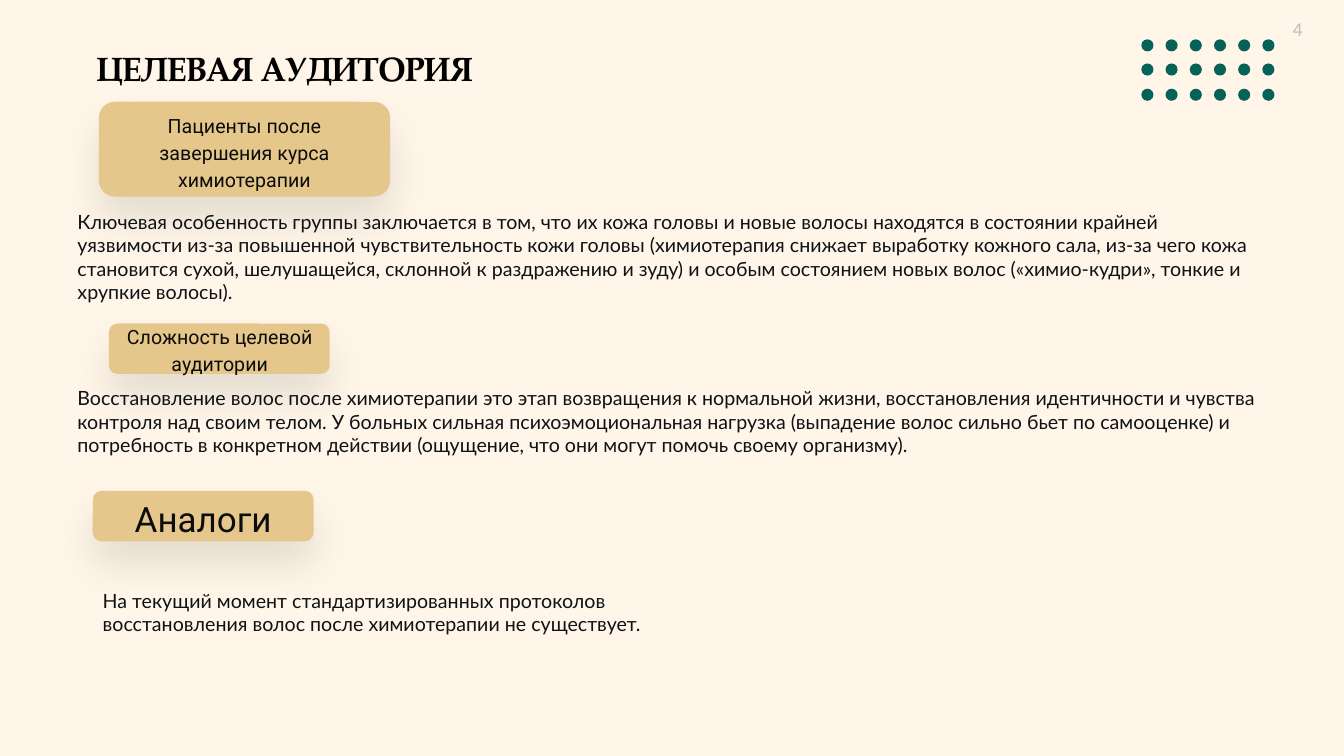
from dataclasses import dataclass

from lxml.etree import SubElement
from pptx import Presentation
from pptx.dml.color import RGBColor
from pptx.enum.shapes import MSO_SHAPE
from pptx.enum.text import MSO_ANCHOR, MSO_AUTO_SIZE, PP_ALIGN
from pptx.oxml.ns import qn
from pptx.slide import Slide
from pptx.util import Emu, Pt

EMU_PER_PX = 9144


@dataclass(frozen=True)
class Theme:
    background: str = "FFF6E9"
    title: str = "000000"
    dot: str = "056256"
    page_number: str = "BFBFBF"
    card: str = "E5C78C"
    label: str = "0C0C0C"
    body: str = "0F1115"
    shadow: str = "000000"
    title_size: int = 24
    text_size: int = 14
    large_label_size: int = 25
    title_font: str = "TeX Gyre Pagella"
    number_font: str = "Calibri"
    label_font: str = "Roboto"
    body_font: str = "Lato"


THEME = Theme()


@dataclass(frozen=True)
class Box:
    left: int
    top: int
    width: int
    height: int

    def emu(self) -> tuple[Emu, Emu, Emu, Emu]:
        return px(self.left), px(self.top), px(self.width), px(self.height)


@dataclass(frozen=True)
class TextStyle:
    font: str
    size: int
    color: str
    bold: bool = False
    align: PP_ALIGN = PP_ALIGN.LEFT
    line_spacing: float = 1.0
    grow: bool = False


@dataclass(frozen=True)
class TextBlock:
    box: Box
    text: str
    style: TextStyle


@dataclass(frozen=True)
class Card:
    box: Box
    label: TextBlock


TITLE = TextStyle(THEME.title_font, THEME.title_size, THEME.title, bold=True, grow=True)
NUMBER = TextStyle(THEME.number_font, THEME.text_size, THEME.page_number, align=PP_ALIGN.CENTER)
LABEL = TextStyle(THEME.label_font, THEME.text_size, THEME.label,
                  align=PP_ALIGN.CENTER, line_spacing=1.14)
LARGE_LABEL = TextStyle(THEME.label_font, THEME.large_label_size, THEME.label,
                        align=PP_ALIGN.CENTER, line_spacing=1.14)
BODY = TextStyle(THEME.body_font, THEME.text_size, THEME.body, grow=True)

HEADING = TextBlock(Box(86, 43, 550, 50), "ЦЕЛЕВАЯ АУДИТОРИЯ", TITLE)
PAGE_NUMBER = TextBlock(Box(1251, 12, 72, 27), "4", NUMBER)

CARDS = [
    Card(Box(98, 101, 289, 94), TextBlock(
        Box(114, 105, 257, 50), "Пациенты после завершения курса химиотерапии", LABEL)),
    Card(Box(108, 321, 219, 50), TextBlock(
        Box(98, 314, 240, 50), "Сложность целевой аудитории", LABEL)),
    Card(Box(92, 487, 219, 50), TextBlock(
        Box(92, 483, 219, 50), "Аналоги", LARGE_LABEL)),
]

BODY_TEXTS = [
    TextBlock(
        Box(67, 203, 1195, 104),
        "Ключевая особенность группы заключается в том, что их кожа головы и новые волосы "
        "находятся в состоянии крайней уязвимости из-за повышенной чувствительность кожи головы "
        "(химиотерапия снижает выработку кожного сала, из-за чего кожа становится сухой, "
        "шелушащейся, склонной к раздражению и зуду) и особым состоянием новых волос "
        "(«химио-кудри», тонкие и хрупкие волосы).",
        BODY),
    TextBlock(
        Box(67, 378, 1204, 81),
        "Восстановление волос после химиотерапии это этап возвращения к нормальной жизни, "
        "восстановления идентичности и чувства контроля над своим телом. У больных сильная "
        "психоэмоциональная нагрузка (выпадение волос сильно бьет по самооценке) и потребность "
        "в конкретном действии (ощущение, что они могут помочь своему организму).",
        BODY),
    TextBlock(
        Box(92, 579, 667, 57),
        "На текущий момент стандартизированных протоколов восстановления волос после "
        "химиотерапии не существует.",
        BODY),
]

DOT_ROWS, DOT_COLUMNS = 3, 6
DOT_LEFT, DOT_TOP, DOT_SIZE = 1132, 39, 12
DOT_PITCH = 24


def px(value: int) -> Emu:
    return Emu(value * EMU_PER_PX)


def add_text(slide: Slide, block: TextBlock) -> None:
    style = block.style
    frame = slide.shapes.add_textbox(*block.box.emu()).text_frame
    frame.word_wrap = True
    frame.vertical_anchor = MSO_ANCHOR.TOP
    frame.auto_size = MSO_AUTO_SIZE.SHAPE_TO_FIT_TEXT if style.grow else MSO_AUTO_SIZE.NONE
    paragraph = frame.paragraphs[0]
    paragraph.alignment = style.align
    paragraph.line_spacing = style.line_spacing
    run = paragraph.add_run()
    run.text = block.text
    run.font.name = style.font
    run.font.size = Pt(style.size)
    run.font.bold = style.bold
    run.font.color.rgb = RGBColor.from_string(style.color)


def add_card(slide: Slide, card: Card) -> None:
    shape = slide.shapes.add_shape(MSO_SHAPE.ROUNDED_RECTANGLE, *card.box.emu())
    shape.adjustments[0] = 0.17
    shape.fill.solid()
    shape.fill.fore_color.rgb = RGBColor.from_string(THEME.card)
    shape.line.fill.background()
    shape.shadow.inherit = False
    effects = shape._element.spPr.find(qn("a:effectLst"))
    shadow = SubElement(effects, qn("a:outerShdw"), blurRad=str(Pt(29.2)), dist=str(Pt(16.5)),
                        dir="5400000", algn="t", rotWithShape="0")
    color = SubElement(shadow, qn("a:srgbClr"), val=THEME.shadow)
    SubElement(color, qn("a:alpha"), val="10000")
    add_text(slide, card.label)


def add_dot_grid(slide: Slide) -> None:
    group = slide.shapes.add_group_shape()
    for row in range(DOT_ROWS):
        for column in range(DOT_COLUMNS):
            box = Box(DOT_LEFT + column * DOT_PITCH, DOT_TOP + row * 49 // 2, DOT_SIZE, DOT_SIZE)
            dot = group.shapes.add_shape(MSO_SHAPE.OVAL, *box.emu())
            dot.fill.solid()
            dot.fill.fore_color.rgb = RGBColor.from_string(THEME.dot)
            dot.line.fill.background()
            dot.shadow.inherit = False


def main() -> None:
    presentation = Presentation()
    presentation.slide_width = px(1333)
    presentation.slide_height = px(750)
    slide = presentation.slides.add_slide(presentation.slide_layouts[6])
    slide.background.fill.solid()
    slide.background.fill.fore_color.rgb = RGBColor.from_string(THEME.background)
    add_text(slide, HEADING)
    add_dot_grid(slide)
    add_text(slide, PAGE_NUMBER)
    for card in CARDS:
        add_card(slide, card)
    for block in BODY_TEXTS:
        add_text(slide, block)
    presentation.save("out.pptx")


if __name__ == "__main__":
    main()
